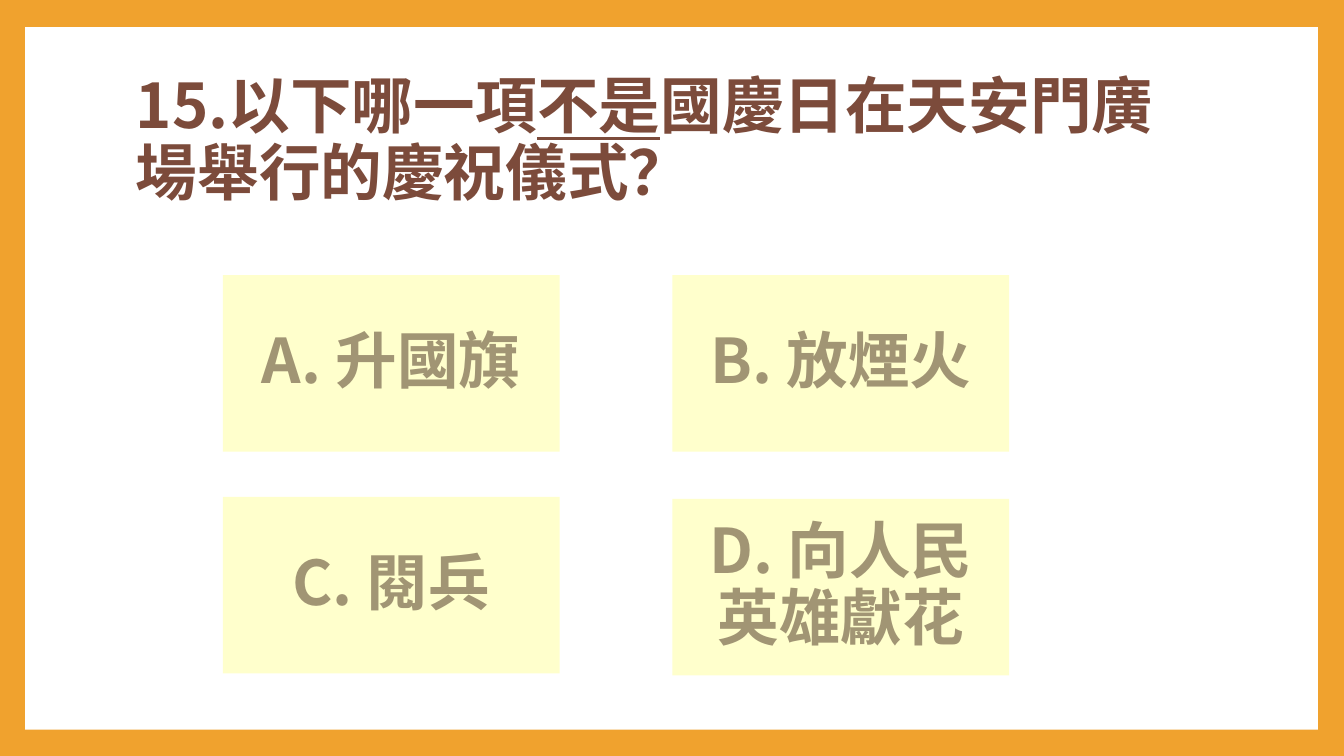
from dataclasses import dataclass

from lxml.etree import SubElement
from pptx import Presentation
from pptx.dml.color import RGBColor
from pptx.enum.shapes import MSO_SHAPE as Shape
from pptx.enum.text import MSO_ANCHOR as Anchor, PP_ALIGN as Align
from pptx.oxml.ns import qn
from pptx.util import Inches, Pt

FONT = "Noto Sans CJK SC"
ORANGE, WHITE, CREAM = "F0A22E", "FFFFFF", "FFFFCC"
BROWN, TAUPE = "7C4B3B", "A19574"
LEFT_COLUMN, RIGHT_COLUMN = 2.21, 6.67
CARD_WIDTH, CARD_HEIGHT = 3.34, 1.75


@dataclass
class Answer:
    text: str
    left: float
    top: float


ANSWERS = [
    Answer("D. 向人民英雄獻花", RIGHT_COLUMN, 4.95),
    Answer("C. 閱兵", LEFT_COLUMN, 4.93),
    Answer("B. 放煙火", RIGHT_COLUMN, 2.73),
    Answer("A. 升國旗", LEFT_COLUMN, 2.73),
]
QUESTION = ["15.以下哪一項", "不是", "國慶日在天安門廣場舉行的慶祝儀式？"]
UNDERLINED = "不是"


def paint(fill, color: str) -> None:
    fill.solid()
    fill.fore_color.rgb = RGBColor.from_string(color)


def style_run(span, color: str) -> None:
    font = span.font
    font.name, font.size, font.bold = FONT, Pt(44), True
    paint(font.fill, color)
    SubElement(span._r.get_or_add_rPr(), qn("a:ea"), typeface=FONT)


def prepare_frame(frame):
    """Wrap and centre the frame vertically; return its first paragraph."""
    frame.word_wrap = True
    frame.vertical_anchor = Anchor.MIDDLE
    para = frame.paragraphs[0]
    para.line_spacing = 0.9
    return para


def add_panel(page, left: float, top: float, width: float, height: float, color: str):
    panel = page.shapes.add_shape(
        Shape.RECTANGLE, Inches(left), Inches(top), Inches(width), Inches(height))
    panel.shadow.inherit = False
    paint(panel.fill, color)
    panel.line.fill.background()
    return panel


def add_question(page) -> None:
    box = page.shapes.add_textbox(Inches(1.25), Inches(0.67), Inches(10.8), Inches(1.48))
    para = prepare_frame(box.text_frame)
    for part in QUESTION:
        span = para.add_run()
        span.text = part
        style_run(span, BROWN)
        span.font.underline = part == UNDERLINED


def add_answer(page, answer: Answer) -> None:
    card = add_panel(page, answer.left, answer.top, CARD_WIDTH, CARD_HEIGHT, CREAM)
    card.text_frame.text = answer.text
    para = prepare_frame(card.text_frame)
    para.alignment = Align.CENTER
    para.space_before = Pt(14)
    style_run(para.runs[0], TAUPE)


def main() -> None:
    deck = Presentation()
    deck.slide_width, deck.slide_height = Inches(13.33), Inches(7.5)
    page = deck.slides.add_slide(deck.slide_layouts[6])
    paint(page.background.fill, ORANGE)
    add_panel(page, 0.25, 0.27, 12.82, 6.97, WHITE)
    add_question(page)
    for answer in ANSWERS:
        add_answer(page, answer)
    deck.save("out.pptx")


if __name__ == "__main__":
    main()
